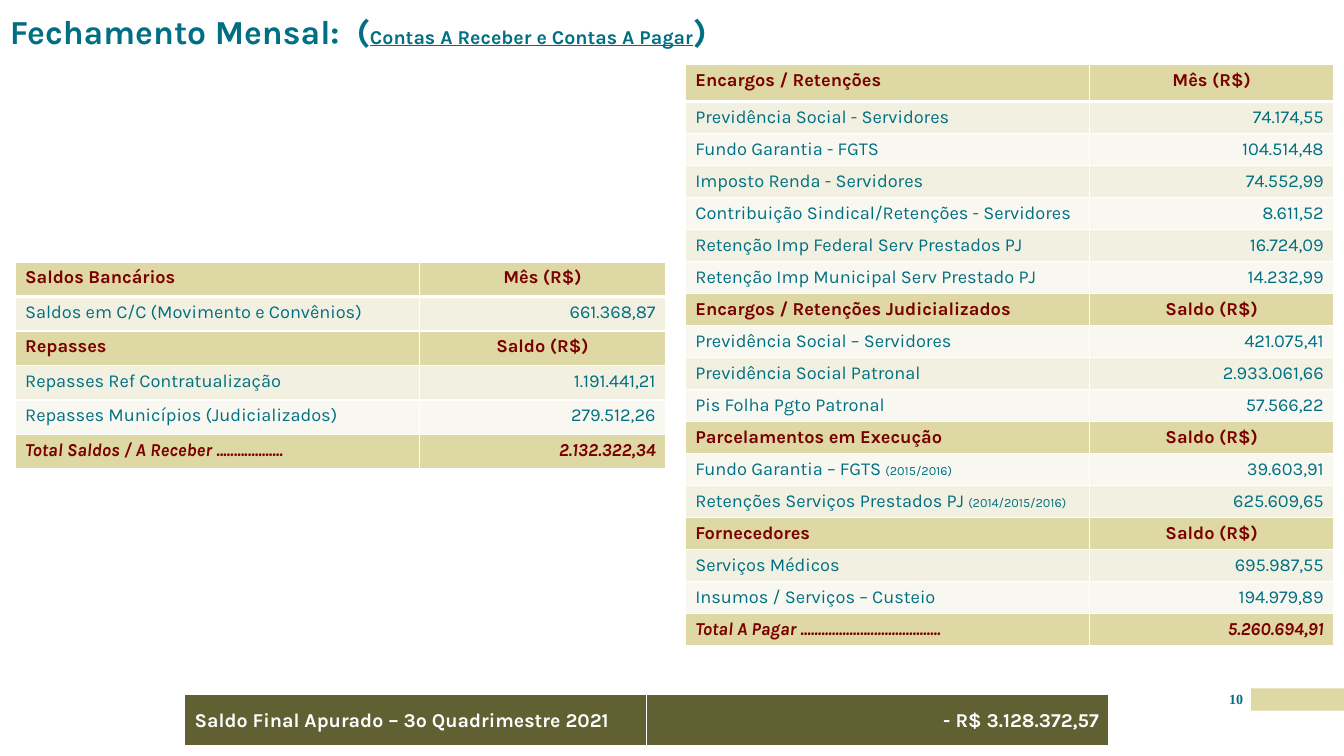
from pptx import Presentation
from pptx.dml.color import RGBColor
from pptx.enum.shapes import MSO_SHAPE as Shape
from pptx.enum.text import MSO_ANCHOR as Anchor, MSO_AUTO_SIZE as AutoSize, PP_ALIGN as Align
from pptx.oxml import parse_xml
from pptx.oxml.ns import nsdecls
from pptx.util import Cm, Pt

TEAL = RGBColor(0x00, 0x6F, 0x83)
MAROON = RGBColor(0x7A, 0x00, 0x00)
SAND = RGBColor(0xDE, 0xD8, 0xA4)
BAND_DARK = RGBColor(0xF2, 0xF0, 0xE0)
BAND_LIGHT = RGBColor(0xF9, 0xF8, 0xF0)
OLIVE = RGBColor(0x60, 0x60, 0x32)
WHITE = RGBColor(0xFF, 0xFF, 0xFF)

FONT = "Karla"
HEADING, ITEM, TOTAL = "heading", "item", "total"

# Each row: kind, label, amount and, where needed, a small note
RECEIVABLES = [
    (HEADING, "Saldos Bancários", "Mês (R$)"),
    (ITEM, "Saldos em C/C (Movimento e Convênios)", "661.368,87"),
    (HEADING, "Repasses", "Saldo (R$)"),
    (ITEM, "Repasses Ref Contratualização", "1.191.441,21"),
    (ITEM, "Repasses Municípios (Judicializados)", "279.512,26"),
    (TOTAL, "Total Saldos / A Receber ...................", "2.132.322,34"),
]
PAYABLES = [
    (HEADING, "Encargos / Retenções", "Mês (R$)"),
    (ITEM, "Previdência Social - Servidores", "74.174,55"),
    (ITEM, "Fundo Garantia - FGTS", "104.514,48"),
    (ITEM, "Imposto Renda - Servidores", "74.552,99"),
    (ITEM, "Contribuição Sindical/Retenções - Servidores", "8.611,52"),
    (ITEM, "Retenção Imp Federal Serv Prestados PJ", "16.724,09"),
    (ITEM, "Retenção Imp Municipal Serv Prestado PJ", "14.232,99"),
    (HEADING, "Encargos / Retenções Judicializados", "Saldo (R$)"),
    (ITEM, "Previdência Social – Servidores", "421.075,41"),
    (ITEM, "Previdência Social Patronal", "2.933.061,66"),
    (ITEM, "Pis Folha Pgto Patronal", "57.566,22"),
    (HEADING, "Parcelamentos em Execução", "Saldo (R$)"),
    (ITEM, "Fundo Garantia – FGTS ", "39.603,91", "(2015/2016)"),
    (ITEM, "Retenções Serviços Prestados PJ ", "625.609,65", "(2014/2015/2016)"),
    (HEADING, "Fornecedores", "Saldo (R$)"),
    (ITEM, "Serviços Médicos", "695.987,55"),
    (ITEM, "Insumos / Serviços – Custeio", "194.979,89"),
    (TOTAL, "Total A Pagar ........................................", "5.260.694,91"),
]


def add_run(paragraph, text, size, color, bold=False, italic=False, underline=False, font=FONT):
    run = paragraph.add_run()
    run.text = text
    run.font.name = font
    run.font.size = Pt(size)
    run.font.bold = bold
    run.font.italic = italic
    run.font.underline = underline
    run.font.color.rgb = color


def clear_margins(frame):
    frame.margin_left = frame.margin_right = frame.margin_top = frame.margin_bottom = 0


def set_borders(cell, top=1, bottom=1):
    properties = cell._tc.get_or_add_tcPr()
    widths = {"lnL": 1, "lnR": 1, "lnT": top, "lnB": bottom}
    for position, (side, width) in enumerate(widths.items()):
        properties.insert(position, parse_xml(
            f'<a:{side} {nsdecls("a")} w="{Pt(width)}"><a:solidFill>'
            f'<a:srgbClr val="{WHITE}"/></a:solidFill></a:{side}>'))


def format_cell(cell, fill, align, top=1, bottom=1):
    """Fill and rule the cell, and return its paragraph."""
    cell.fill.solid()
    cell.fill.fore_color.rgb = fill
    set_borders(cell, top, bottom)
    paragraph = cell.text_frame.paragraphs[0]
    paragraph.alignment = align
    return paragraph


def add_grid(slide, left, top, column_widths, row_heights):
    grid = slide.shapes.add_table(
        len(row_heights), len(column_widths), Cm(left), Cm(top),
        Cm(sum(column_widths)), Cm(sum(row_heights))).table
    grid.first_row = grid.horz_banding = False
    for column, width in zip(grid.columns, column_widths):
        column.width = Cm(width)
    for row, height in zip(grid.rows, row_heights):
        row.height = Cm(height)
    return grid


def add_ledger(slide, entries, left, top, column_widths, heading_height, row_height):
    heights = [heading_height] + [row_height] * (len(entries) - 1)
    ledger = add_grid(slide, left, top, column_widths, heights)
    for index, (kind, label, amount, *notes) in enumerate(entries):
        is_item = kind == ITEM
        band = BAND_DARK if index % 2 else BAND_LIGHT
        fill = band if is_item else SAND
        color = TEAL if is_item else MAROON
        # A thick rule separates the first heading from the rows below
        rules = {"top": 3 if index == 1 else 1, "bottom": 3 if index == 0 else 1}
        amount_align = Align.CENTER if kind == HEADING else Align.RIGHT
        for column, (text, align) in enumerate([(label, Align.LEFT), (amount, amount_align)]):
            paragraph = format_cell(ledger.cell(index, column), fill, align, **rules)
            add_run(paragraph, text, 13, color, bold=not is_item, italic=kind == TOTAL)
            if column == 0:
                for note in notes:
                    add_run(paragraph, note, 9, color)


def add_final_balance(slide):
    balance = add_grid(slide, 4.65, 17.5, [11.65, 11.65], [1.31])
    texts = [("Saldo Final Apurado – 3º Quadrimestre 2021", Align.LEFT),
             ("- R$ 3.128.372,57", Align.RIGHT)]
    for column, (text, align) in enumerate(texts):
        cell = balance.cell(0, column)
        cell.vertical_anchor = Anchor.MIDDLE
        add_run(format_cell(cell, OLIVE, align, bottom=3), text, 14, WHITE, bold=True)


def format_title(slide):
    title = slide.shapes.title
    title.left, title.top, title.width, title.height = Cm(0.25), Cm(0.38), Cm(33.05), Cm(1.27)
    frame = title.text_frame
    clear_margins(frame)
    frame.word_wrap = True
    frame.auto_size = AutoSize.NONE
    frame.vertical_anchor = Anchor.TOP
    paragraph = frame.paragraphs[0]
    paragraph.alignment = Align.LEFT
    paragraph.line_spacing = 0.9
    add_run(paragraph, "Fechamento Mensal:  (", 24, TEAL, bold=True)
    add_run(paragraph, "Contas A Receber e Contas A Pagar", 14, TEAL, bold=True, underline=True)
    add_run(paragraph, ")", 24, TEAL, bold=True)


def add_page_marker(slide):
    strip = slide.shapes.add_shape(Shape.RECTANGLE, Cm(31.53), Cm(17.35), Cm(2.34), Cm(0.56))
    strip.shadow.inherit = False
    strip.fill.solid()
    strip.fill.fore_color.rgb = SAND
    strip.line.fill.background()

    number = slide.shapes.add_textbox(Cm(30.78), Cm(17.4), Cm(0.74), Cm(0.64))
    frame = number.text_frame
    clear_margins(frame)
    frame.word_wrap = True
    paragraph = frame.paragraphs[0]
    paragraph.alignment = Align.CENTER
    add_run(paragraph, "10", 10, TEAL, bold=True, font="Times New Roman")


def main():
    presentation = Presentation()
    presentation.slide_width, presentation.slide_height = Cm(33.87), Cm(19.05)
    slide = presentation.slides.add_slide(presentation.slide_layouts[5])

    add_page_marker(slide)
    format_title(slide)
    # Amounts to pay on the right, balances and amounts to receive on the left
    add_ledger(slide, PAYABLES, 17.27, 1.63, [10.19, 6.15], 0.93, 0.8)
    add_ledger(slide, RECEIVABLES, 0.38, 6.6, [10.19, 6.2], 0.87, 0.87)
    add_final_balance(slide)

    presentation.save("out.pptx")


if __name__ == "__main__":
    main()
